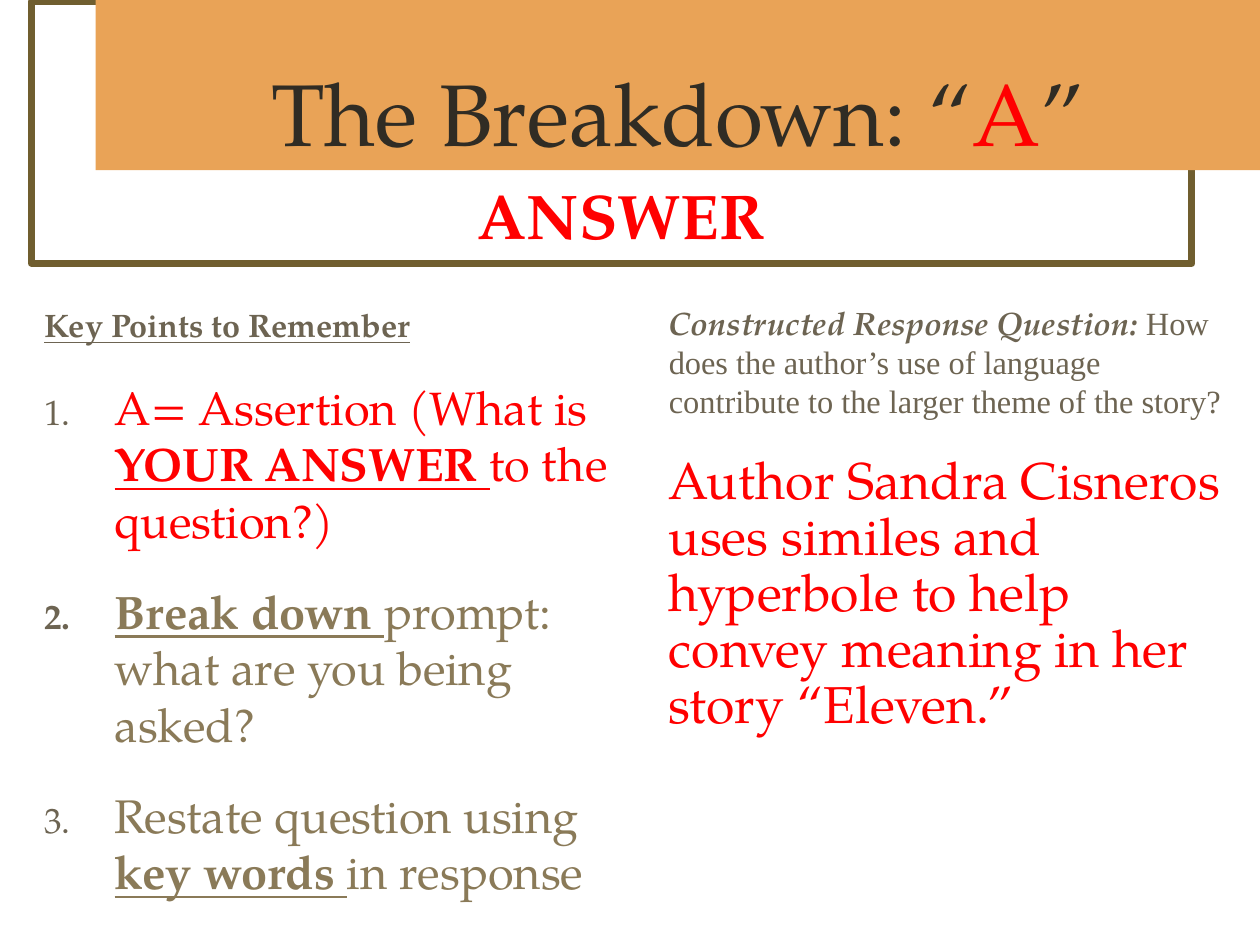
"""Build the slide that explains the "A" (answer) step of a constructed response."""
from lxml.etree import SubElement
from pptx import Presentation
from pptx.dml.color import RGBColor
from pptx.enum.shapes import MSO_SHAPE
from pptx.enum.text import MSO_ANCHOR, MSO_AUTO_SIZE, PP_ALIGN
from pptx.oxml.ns import qn
from pptx.util import Inches, Pt

THEME = {
    "font": "TeX Gyre Pagella", "serif": "Times New Roman",
    "white": "FFFFFF", "band": "E9A357", "frame": "705E2F", "dark": "302C24",
    "red": "FF0000", "muted": "6D6452", "tan": "8A7A58",
    "title": 50, "answer": 36, "label": 18.5, "point": 26.8, "example": 29.6,
    "gap": 20,
}

TITLE = [("The Breakdown: “", {}), ("A", {"color": "red"}), ("”", {})]
ANSWER = [("ANSWER", {"bold": True})]
STRONG = {"bold": True, "underline": True}
HEADING = [("Key Points to Remember", STRONG)]
POINTS = [
    ("red", [("A= Assertion (What is ", {}), ("YOUR ANSWER ", STRONG), ("to the question?)", {})]),
    ("tan", [("Break down ", STRONG), ("prompt: what are you being asked?", {})]),
    ("tan", [("Restate question using ", {}), ("key words ", STRONG), ("in response", {})]),
]
QUESTION = [
    ("Constructed Response Question: ", {"bold": True, "italic": True}),
    ("How does the author’s use of language contribute to the larger theme of the story?",
     {"font": "serif"}),
]
EXAMPLE = [("Author Sandra Cisneros uses similes and hyperbole to help convey "
            "meaning in her story “Eleven.”", {})]

BOXES = {
    "frame": (0.25, 0.01, 9.21, 2.08),
    "title": (0.76, 0, 9.24, 1.35),
    "points": (0.25, 2.37, 4.96, 4.7),
    "question": (5.21, 2.36, 4.64, 3.84),
    "answer": (2.62, 1.35, 4.62, 0.71),
}
CORNER_ARMS = {"adj1": 47500, "adj2": 51300}


def color(name):
    return RGBColor.from_string(THEME[name])


def place(shape, name):
    shape.left, shape.top, shape.width, shape.height = map(Inches, BOXES[name])


def prepare(shape, anchor=MSO_ANCHOR.TOP):
    frame = shape.text_frame
    frame.word_wrap = True
    frame.auto_size = MSO_AUTO_SIZE.NONE
    frame.vertical_anchor = anchor
    return frame


def add_text(frame, runs, size, ink, align=PP_ALIGN.LEFT, before=0, spacing=1.0,
             indent=0, numbered=False):
    paragraph = frame.paragraphs[0]
    if paragraph.runs:
        paragraph = frame.add_paragraph()
    paragraph.alignment = align
    paragraph.space_before = Pt(before)
    paragraph.line_spacing = spacing
    properties = paragraph._p.get_or_add_pPr()
    properties.set("marL", str(Inches(indent)))
    properties.set("indent", str(-Inches(indent)))
    if numbered:
        bullet_color = SubElement(properties, qn("a:buClr"))
        SubElement(bullet_color, qn("a:srgbClr"), val=THEME["muted"])
        SubElement(properties, qn("a:buSzPct"), val="75000")
        SubElement(properties, qn("a:buFont"), typeface=THEME["font"])
        SubElement(properties, qn("a:buAutoNum"), type="arabicPeriod")
    else:
        SubElement(properties, qn("a:buNone"))
    for text, style in runs:
        run = paragraph.add_run()
        run.text = text
        font = run.font
        font.name = THEME[style.get("font", "font")]
        font.size = Pt(THEME[size])
        font.color.rgb = color(style.get("color", ink))
        font.bold = style.get("bold", False)
        font.italic = style.get("italic", False)
        font.underline = style.get("underline", False)


def add_text_box(slide, name):
    box = slide.shapes.add_textbox(*map(Inches, BOXES[name]))
    return prepare(box)


def add_corner(slide):
    corner = slide.shapes.add_shape(MSO_SHAPE.RECTANGLE, *map(Inches, BOXES["frame"]))
    geometry = corner.element.spPr.find(qn("a:prstGeom"))
    geometry.set("prst", "corner")
    guides = geometry.find(qn("a:avLst"))
    for name, value in CORNER_ARMS.items():
        SubElement(guides, qn("a:gd"), name=name, fmla=f"val {value}")
    corner.shadow.inherit = False
    corner.fill.solid()
    corner.fill.fore_color.rgb = color("white")
    corner.line.color.rgb = color("frame")
    corner.line.width = Pt(4)
    return corner


def main():
    presentation = Presentation()
    presentation.slide_width, presentation.slide_height = Inches(10), Inches(7.5)
    slide = presentation.slides.add_slide(presentation.slide_layouts[1])
    title, body = slide.shapes.title, slide.placeholders[1]
    title.element.addprevious(add_corner(slide).element)

    place(title, "title")
    title.fill.solid()
    title.fill.fore_color.rgb = color("band")
    add_text(prepare(title, MSO_ANCHOR.BOTTOM), TITLE, "title", "dark", align=PP_ALIGN.CENTER)

    place(body, "points")
    points = prepare(body)
    gap = THEME["gap"]
    add_text(points, HEADING, "label", "muted", before=gap, indent=0.5)
    for ink, runs in POINTS:
        add_text(points, runs, "point", ink, before=gap, indent=0.56, numbered=True)

    question = add_text_box(slide, "question")
    add_text(question, QUESTION, "label", "muted")
    add_text(question, EXAMPLE, "example", "red", before=gap, spacing=0.9)

    add_text(add_text_box(slide, "answer"), ANSWER, "answer", "red", align=PP_ALIGN.CENTER)
    presentation.save("out.pptx")


if __name__ == "__main__":
    main()
